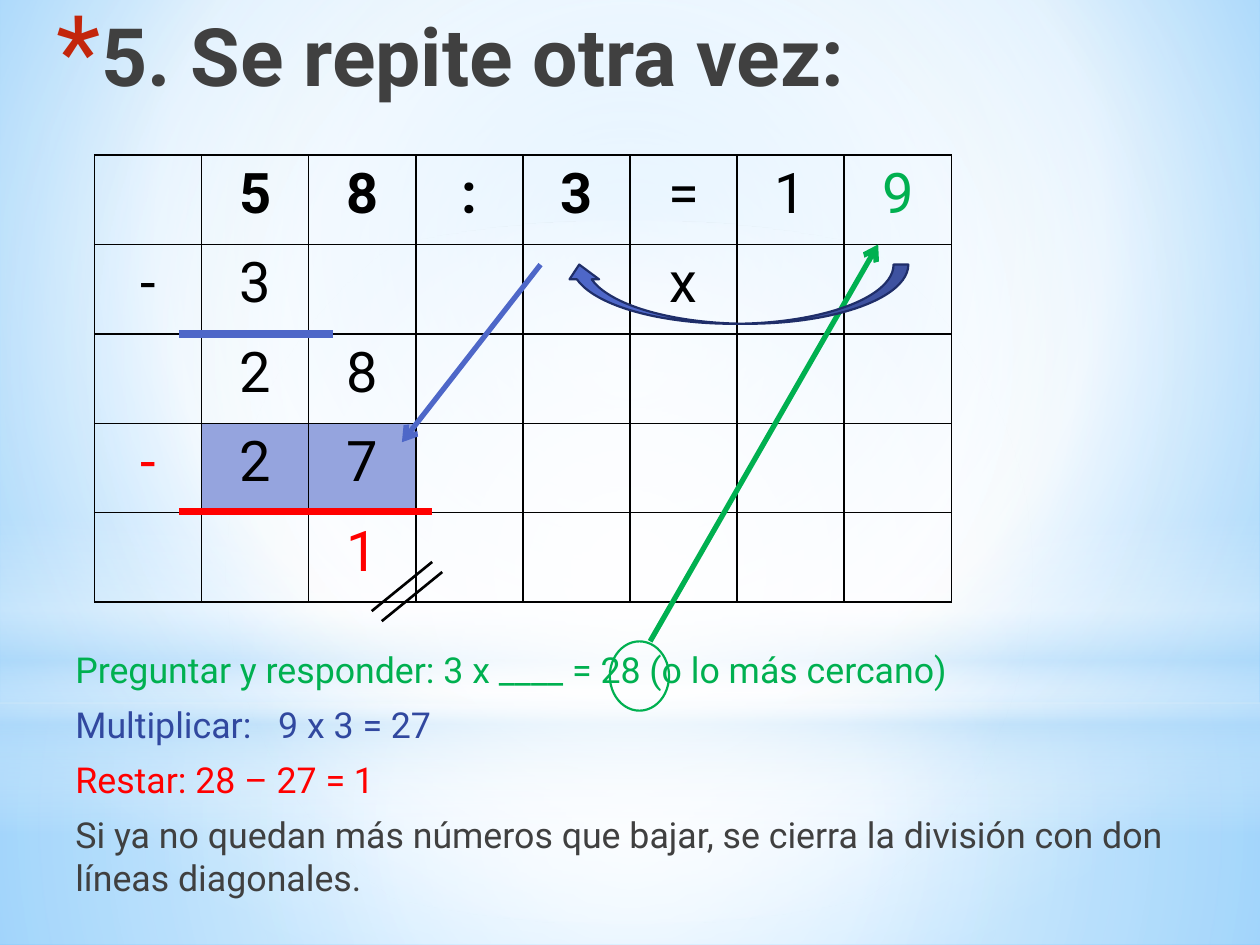
from lxml.etree import SubElement
from pptx import Presentation
from pptx.dml.color import RGBColor
from pptx.enum.shapes import MSO_CONNECTOR as Connector, MSO_SHAPE as Shape
from pptx.enum.text import MSO_ANCHOR as Anchor, MSO_AUTO_SIZE as AutoSize, PP_ALIGN as Align
from pptx.oxml import parse_xml
from pptx.oxml.ns import nsdecls, qn
from pptx.util import Inches, Pt

FONT = "Roboto"
BLACK, GRAY, RED, GREEN = "000000", "404040", "FF0000", "00B050"
BLUE, DARK_BLUE, NAVY, LAVENDER = "4E67C8", "31489F", "1F2E69", "95A4DE"
WHITE, SKY = "FFFFFF", "B4DCFA"

CENTER = (50, 50, 50, 50)
BACKGROUND_STOPS = [(0, "9ED5FF", 100), (60, WHITE, 100), (100, "5BB9FF", 100)]
# shape, box, gradient stops (position, colour, opacity), focus of a circular gradient
BACKDROP = [
    (Shape.RECTANGLE, (0, 5.58, 10, 1.92),
     [(0, WHITE, 91), (37, WHITE, 76), (100, SKY, 79)], CENTER),
    (Shape.RECTANGLE, (0, 0, 10, 5.58),
     [(0, WHITE, 89), (48, WHITE, 62), (100, SKY, 79)], CENTER),
    (Shape.RECTANGLE, (0, 4.12, 10, 2.5),
     [(0, WHITE, 0), (29, WHITE, 30), (45, SKY, 40), (55, WHITE, 26),
      (65, SKY, 60), (100, WHITE, 0)], None),
    (Shape.OVAL, (0, 1.75, 10, 5.58), [(0, WHITE, 100), (56, WHITE, 0)], CENTER),
]

DIVISION = [" 58:3=19", "-3   x  ", " 28     ", "-27     ", "  1     "]
CELL_COLORS = {(0, 7): GREEN, (3, 0): RED, (4, 2): RED}
BOLD_CELLS = {(0, column) for column in range(1, 5)}
PRODUCT_CELLS = {(3, 1), (3, 2)}
COLUMN_WIDTH, ROW_HEIGHT = 0.85, 0.71

STEPS = [
    ("Preguntar y responder: 3 x ____ = 28 (o lo más cercano)", GREEN),
    ("Multiplicar:\t9 x 3 = 27", DARK_BLUE),
    ("Restar: 28 – 27 = 1", RED),
    ("Si ya no quedan más números que bajar, se cierra la división con don "
     "líneas diagonales.", GRAY),
]


def rgb(color):
    return RGBColor.from_string(color)


def set_attributes(target, values):
    for name, value in values.items():
        setattr(target, name, value)


def format_font(font, size, color, bold=False):
    set_attributes(font, {"name": FONT, "size": Pt(size), "bold": bold})
    font.color.rgb = rgb(color)


def replace_with_gradient(properties, stops, focus):
    """Swap a solid fill for a gradient, circular around focus or else vertical."""
    stop_xml = "".join(
        f'<a:gs pos="{position * 1000}"><a:srgbClr val="{color}">'
        f'<a:alpha val="{opacity * 1000}"/></a:srgbClr></a:gs>'
        for position, color, opacity in stops)
    if focus:
        edges = " ".join(f'{side}="{value * 1000}"' for side, value in zip("ltrb", focus))
        course = f'<a:path path="circle"><a:fillToRect {edges}/></a:path>'
    else:
        course = '<a:lin ang="5400000" scaled="0"/>'
    gradient = parse_xml(f'<a:gradFill {nsdecls("a")} rotWithShape="1">'
                         f'<a:gsLst>{stop_xml}</a:gsLst>{course}</a:gradFill>')
    properties.replace(properties.find(qn("a:solidFill")), gradient)


def add_preset(slide, preset, box, fill=None, line=None, line_width=1.25):
    shape = slide.shapes.add_shape(preset, *map(Inches, box))
    shape.shadow.inherit = False
    if fill:
        shape.fill.solid()
        shape.fill.fore_color.rgb = rgb(fill)
    else:
        shape.fill.background()
    if line:
        shape.line.color.rgb = rgb(line)
        shape.line.width = Pt(line_width)
    else:
        shape.line.fill.background()
    return shape


def add_line(slide, start, end, color, width, arrow=False):
    line = slide.shapes.add_connector(Connector.STRAIGHT, *map(Inches, start + end))
    line.line.color.rgb = rgb(color)
    line.line.width = Pt(width)
    properties = line.element.spPr
    if arrow:
        SubElement(properties.find(qn("a:ln")), qn("a:tailEnd"), type="arrow")
    SubElement(properties, qn("a:effectLst"))


def add_background(slide):
    slide.background.fill.solid()
    replace_with_gradient(slide.element.find(".//" + qn("p:bgPr")),
                          BACKGROUND_STOPS, (20, 10, 20, 60))
    for preset, box, stops, focus in BACKDROP:
        shape = add_preset(slide, preset, box, fill=WHITE)
        replace_with_gradient(shape.element.spPr, stops, focus)


def add_title(slide, text):
    title = slide.shapes.title
    slide.shapes.element.append(title.element)  # in front of the backdrop
    set_attributes(title, {"left": Inches(0.35), "top": Inches(0),
                           "width": Inches(9), "height": Inches(1.25)})
    frame = title.text_frame
    frame.text = text
    set_attributes(frame, {"auto_size": AutoSize.NONE, "word_wrap": True,
                           "vertical_anchor": Anchor.TOP})
    paragraph = frame.paragraphs[0]
    paragraph.alignment = Align.LEFT
    format_font(paragraph.runs[0].font, 46, GRAY, bold=True)
    properties = paragraph._p.get_or_add_pPr()
    indent = Inches(0.35)
    properties.set("marL", str(indent))
    properties.set("indent", str(-indent))
    bullet_color = SubElement(properties, qn("a:buClr"))
    SubElement(bullet_color, qn("a:srgbClr"), val="C3260C")
    SubElement(properties, qn("a:buSzPct"), val="128000")
    SubElement(properties, qn("a:buFont"), typeface=FONT)
    SubElement(properties, qn("a:buChar"), char="*")


def add_steps(slide):
    box = slide.shapes.add_textbox(*map(Inches, (0.5, 5.09, 9, 2.13)))
    frame = box.text_frame
    frame.word_wrap = True
    for index, (text, color) in enumerate(STEPS):
        paragraph = frame.add_paragraph() if index else frame.paragraphs[0]
        set_attributes(paragraph, {"space_before": Pt(4), "space_after": Pt(3)})
        run = paragraph.add_run()
        run.text = text
        format_font(run.font, 20.4, color)
        if "\t" in text:
            tabs = SubElement(paragraph._p.get_or_add_pPr(), qn("a:tabLst"))
            SubElement(tabs, qn("a:tab"), pos=str(Inches(1.61)), algn="l")


def add_cell_borders(cell):
    properties = cell._tc.get_or_add_tcPr()
    for index, side in enumerate(("lnL", "lnR", "lnT", "lnB")):
        properties.insert(index, parse_xml(
            f'<a:{side} {nsdecls("a")} w="{Pt(1)}"><a:solidFill>'
            f'<a:srgbClr val="{BLACK}"/></a:solidFill></a:{side}>'))


def add_division_table(slide):
    rows, columns = len(DIVISION), len(DIVISION[0])
    table = slide.shapes.add_table(
        rows, columns, Inches(0.75), Inches(1.23),
        Inches(columns * COLUMN_WIDTH), Inches(rows * ROW_HEIGHT)).table
    set_attributes(table, {"first_row": False, "horz_banding": False})
    for row, symbols in enumerate(DIVISION):
        for column, symbol in enumerate(symbols):
            cell, place = table.cell(row, column), (row, column)
            if place in PRODUCT_CELLS:
                cell.fill.solid()
                cell.fill.fore_color.rgb = rgb(LAVENDER)
            else:
                cell.fill.background()
            add_cell_borders(cell)
            if symbol != " ":
                paragraph = cell.text_frame.paragraphs[0]
                paragraph.alignment = Align.CENTER
                run = paragraph.add_run()
                run.text = symbol
                format_font(run.font, 32, CELL_COLORS.get(place, BLACK), place in BOLD_CELLS)


def add_marks(slide):
    add_line(slide, (1.42, 2.65), (2.64, 2.65), BLUE, 4.5)
    add_line(slide, (5.16, 5.09), (6.97, 1.94), GREEN, 3, arrow=True)
    add_preset(slide, Shape.OVAL, (4.84, 5.09, 0.47, 0.55), line=GREEN)
    multiply_arrow = add_preset(slide, Shape.CURVED_UP_ARROW, (4.48, 2.1, 2.73, 0.47),
                                fill=BLUE, line=NAVY)
    multiply_arrow.element.spPr.find(qn("a:xfrm")).set("flipH", "1")
    add_line(slide, (4.29, 2.1), (3.19, 3.51), BLUE, 3, arrow=True)
    add_line(slide, (1.42, 4.06), (3.43, 4.06), RED, 4.5)
    for offset in (0, 0.08):
        add_line(slide, (2.95 + offset, 4.85 + offset), (3.43 + offset, 4.46 + offset),
                 BLACK, 1.5)


def main():
    presentation = Presentation()
    set_attributes(presentation, {"slide_width": Inches(10), "slide_height": Inches(7.5)})
    slide = presentation.slides.add_slide(presentation.slide_layouts.get_by_name("Title Only"))
    add_background(slide)
    add_title(slide, "5. Se repite otra vez:")
    add_steps(slide)
    add_division_table(slide)
    add_marks(slide)
    presentation.save("out.pptx")


if __name__ == "__main__":
    main()
